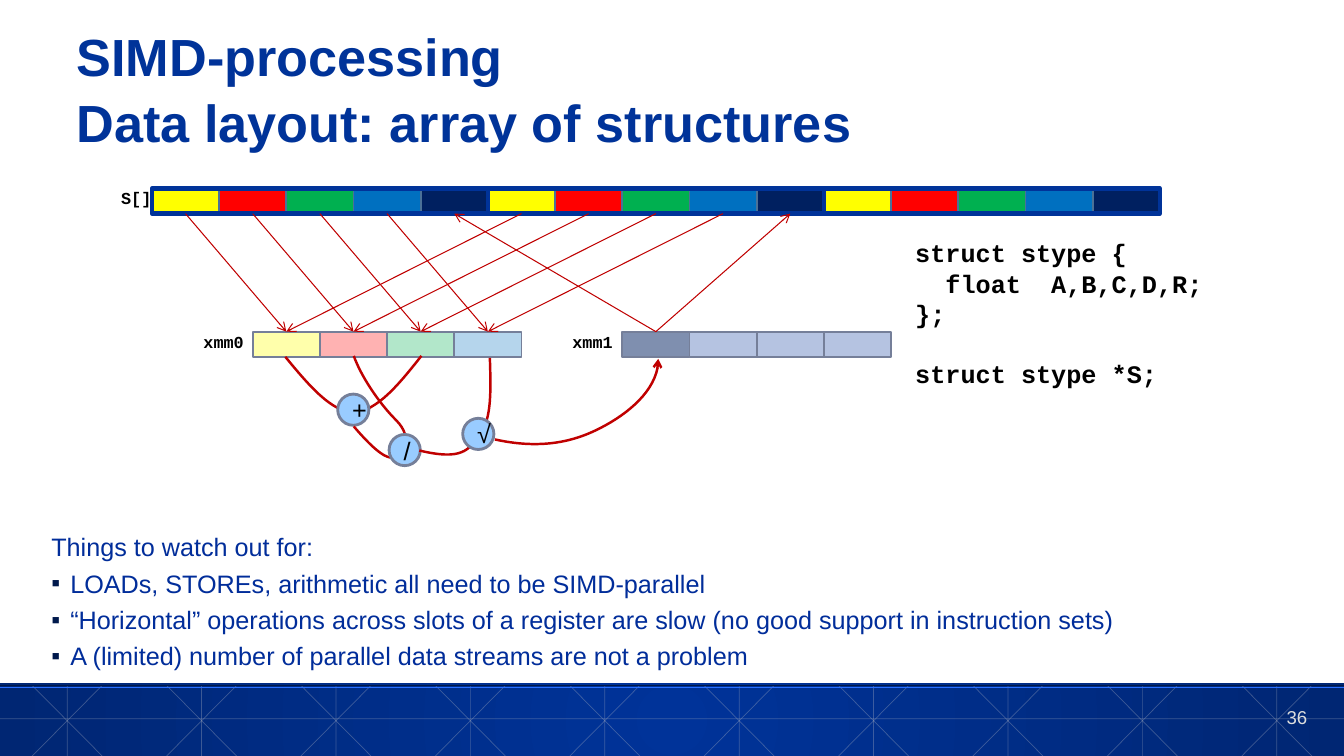
from lxml.etree import SubElement
from pptx import Presentation
from pptx.dml.color import RGBColor
from pptx.enum.shapes import MSO_CONNECTOR, MSO_SHAPE
from pptx.enum.text import MSO_ANCHOR, MSO_AUTO_SIZE, PP_ALIGN
from pptx.oxml.ns import qn
from pptx.util import Pt

COLORS = {
    "navy": "003399", "deep": "002673", "rule": "00194C", "bright": "2970FF",
    "grid": "ACB2C2", "number": "DDDEDD", "body": "012D9A", "black": "000000",
    "yellow": "FFFF00", "red": "FF0000", "green": "00B050", "blue": "0070C0",
    "dark": "002060", "cell_line": "4B7197", "register_line": "757F99",
    "flow": "C00000", "operator": "99CCFF",
}
RGB = {name: RGBColor.from_string(value) for name, value in COLORS.items()}
CELL_W, CELL_H = 48, 18
ARRAY_X, ARRAY_Y, REGISTER_Y = 108.5, 134.6, 236.9


def write(tf, text, size=18, color="black", font="Arial", bold=False,
          align=PP_ALIGN.LEFT, before=0, spacing=None):
    for i, line in enumerate(text.split("\n")):
        p = tf.paragraphs[0] if i == 0 else tf.add_paragraph()
        p.text = line
        p.alignment = align
        p.space_before = Pt(before if i else 0)
        if spacing:
            p.line_spacing = spacing
        for r in p.runs:
            r.font.size, r.font.name, r.font.bold = Pt(size), font, bold
            r.font.color.rgb = RGB[color]


def outline(s, color, width, arrow=False):
    """Set the line of a shape or connector and switch its shadow off."""
    s.line.color.rgb = RGB[color]
    s.line.width = Pt(width)
    if arrow:
        SubElement(s.line._ln, qn("a:tailEnd"), type="arrow")
    SubElement(s._element.spPr, qn("a:effectLst"))


prs = Presentation()
prs.slide_width, prs.slide_height = Pt(960), Pt(540)
slide = prs.slides.add_slide(prs.slide_layouts[1])
shapes = slide.shapes

# Footer band
band = shapes.add_shape(MSO_SHAPE.RECTANGLE, 0, Pt(488.2), Pt(960), Pt(51.8))
band.line.fill.background()
band.shadow.inherit = False
band.fill.gradient()
for stop, color, position in zip(band.fill.gradient_stops, ("navy", "deep"), (0, 1)):
    stop.color.rgb = RGB[color]
    stop.position = position
grad = band._element.spPr.find(qn("a:gradFill"))
grad.remove(grad.find(qn("a:lin")))
radial = SubElement(grad, qn("a:path"), path="circle")
SubElement(radial, qn("a:fillToRect"), l="50000", t="50000", r="50000", b="50000")

grid = [(0, 513.4, 960, 513.4)]
for x in range(48, 960, 96):
    grid += [(x + top, 489.6, x - top, 540) for top in (0, -25, 25)]
for x1, y1, x2, y2 in grid:
    s = shapes.add_connector(MSO_CONNECTOR.STRAIGHT, Pt(x1), Pt(y1), Pt(x2), Pt(y2))
    outline(s, "grid", 0.5)
    SubElement(s.line._ln.find(".//" + qn("a:srgbClr")), qn("a:alpha"), val="35000")
for y, color, width in ((489.6, "rule", 1.25), (491, "bright", 1)):
    s = shapes.add_connector(MSO_CONNECTOR.STRAIGHT, 0, Pt(y), Pt(960), Pt(y))
    outline(s, color, width)

# Title and list
title = shapes.title
title.left, title.top, title.width, title.height = Pt(54.7), Pt(15.1), Pt(850.3), Pt(94.3)
tf = title.text_frame
tf.margin_left = tf.margin_right = tf.margin_top = tf.margin_bottom = 0
tf.vertical_anchor = MSO_ANCHOR.MIDDLE
tf.auto_size = MSO_AUTO_SIZE.NONE
write(tf, "SIMD-processing\vData layout: array of structures", size=37.3,
      color="navy", bold=True, spacing=1.05)

body = slide.placeholders[1]
body.left, body.top, body.width, body.height = Pt(29.5), Pt(373.7), Pt(782.6), Pt(107.3)
tf = body.text_frame
tf.margin_top = Pt(6)
tf.auto_size = MSO_AUTO_SIZE.NONE
write(tf, "Things to watch out for:\n"
      "LOADs, STOREs, arithmetic all need to be SIMD-parallel\n"
      "“Horizontal” operations across slots of a register are slow "
      "(no good support in instruction sets)\n"
      "A (limited) number of parallel data streams are not a problem",
      color="body", before=4.4)
for i, p in enumerate(tf.paragraphs):
    pPr = p._p.get_or_add_pPr()
    indent = Pt(13.5) if i else 0
    pPr.set("marL", str(indent))
    pPr.set("indent", str(-indent))
    if i:
        SubElement(SubElement(pPr, qn("a:buClr")), qn("a:srgbClr"), val=COLORS["rule"])
        SubElement(pPr, qn("a:buFont"), typeface="Arial")
        SubElement(pPr, qn("a:buChar"), char="▪")
    else:
        SubElement(pPr, qn("a:buNone"))

# Rows of cells: x, y, line colour, (fill, opacity in percent) of each cell
struct = ("yellow", "red", "green", "blue", "dark")
rows = {
    "S": (ARRAY_X, ARRAY_Y, "cell_line", [(c, 100) for c in struct * 3]),
    "xmm0": (ARRAY_X + 1.5 * CELL_W, REGISTER_Y, "register_line",
             [("yellow", 33), ("red", 30), ("green", 30), ("blue", 29)]),
    "xmm1": (ARRAY_X + 7 * CELL_W, REGISTER_Y, "register_line",
             [("dark", 50)] + [("navy", 29)] * 3),
}
cells = {}
for name, (x, y, line, fills) in rows.items():
    for i, (color, opacity) in enumerate(fills):
        s = shapes.add_shape(MSO_SHAPE.RECTANGLE, Pt(x + i * CELL_W), Pt(y),
                             Pt(CELL_W), Pt(CELL_H))
        s.fill.solid()
        s.fill.fore_color.rgb = RGB[color]
        if opacity < 100:
            SubElement(s._element.spPr.find(".//" + qn("a:srgbClr")), qn("a:alpha"),
                       val=str(opacity * 1000))
        outline(s, line, 1.25)
        cells[name, i] = s

struct_w = len(struct) * CELL_W
for i in range(3):
    s = shapes.add_shape(MSO_SHAPE.RECTANGLE, Pt(ARRAY_X + i * struct_w), Pt(ARRAY_Y),
                         Pt(struct_w), Pt(CELL_H))
    s.fill.background()
    outline(s, "navy", 3)

# Loads into xmm0 and stores from xmm1
moves = [(("S", first + i), 2, ("xmm0", i), 0) for first in (0, 5) for i in range(4)]
moves += [(("xmm1", 0), 0, ("S", i), 2) for i in (4, 9)]
for source, source_side, target, target_side in moves:
    s = shapes.add_connector(MSO_CONNECTOR.STRAIGHT, 0, 0, 0, 0)
    s.begin_connect(cells[source], source_side)
    s.end_connect(cells[target], target_side)
    outline(s, "flow", 0.75, arrow=True)

# Data flow: Bézier points of each curve, then the operator drawn over it
flows = [
    ([(353.5, 313.9), (382.9, 320.4), (406, 316.8), (425.5, 307.4),
      (445, 298.1), (470.9, 278.6), (470.2, 256.3)], None),
    ([(203.8, 254.9), (220.3, 275), (236.9, 294.5), (252.7, 294.5),
      (269.3, 293.8), (285.1, 274.3), (301, 254.2)], ("+", 241.2, 281.5)),
    ([(252.7, 304.6), (269.3, 324), (276.5, 327.6), (281.5, 326.9),
      (286.6, 326.2), (296.6, 313.9), (283, 300.2),
      (270.7, 288), (257.8, 268.6), (252.7, 254.2)], ("/", 277.9, 310.3)),
    ([(299.5, 321.8), (329.8, 329), (334.8, 321.8), (342.7, 310.3),
      (351.4, 299.5), (350.6, 277.9), (349.9, 255.6)], ("√", 330.5, 298.8)),
]
for points, operator in flows:
    start, *rest = [(Pt(x), Pt(y)) for x, y in points]
    builder = shapes.build_freeform(*start)
    builder.add_line_segments(rest, close=False)
    s = builder.convert_to_shape()
    s.fill.background()
    outline(s, "flow", 1.75, arrow=operator is None)
    segments = list(s._element.iter(qn("a:lnTo")))
    for i in range(0, len(segments), 3):
        curve = SubElement(segments[i].getparent(), qn("a:cubicBezTo"))
        for segment in segments[i:i + 3]:
            curve.append(segment[0])
            segment.getparent().remove(segment)
    if operator:
        symbol, x, y = operator
        s = shapes.add_shape(MSO_SHAPE.OVAL, Pt(x), Pt(y), Pt(22.3), Pt(22.3))
        s.fill.solid()
        s.fill.fore_color.rgb = RGB["operator"]
        outline(s, "register_line", 2)
        write(s.text_frame, symbol, align=PP_ALIGN.CENTER)

# Labels, code and slide number
code = {"font": "Courier New", "bold": True}
label = {**code, "size": 12, "align": PP_ALIGN.RIGHT}
for text, x, y, w, h, style in (
        ("S[]", 67.2, 130.3, 48, 21.6, label),
        ("xmm0", 133.2, 233.3, 48, 21.6, label),
        ("xmm1", 396.7, 233.3, 48, 21.6, label),
        ("struct stype {\n  float  A,B,C,D,R;\n};", 646.6, 166.3, 240, 72,
         {**code, "spacing": Pt(21.6)}),
        ("struct stype *S;", 646.6, 252.7, 240, 28.8, {**code, "spacing": Pt(21.6)})):
    tf = shapes.add_textbox(Pt(x), Pt(y), Pt(w), Pt(h)).text_frame
    tf.word_wrap = True
    write(tf, text, **style)

tf = shapes.add_textbox(Pt(907.2), Pt(504.7), Pt(26.6), Pt(15.8)).text_frame
tf.margin_left = tf.margin_right = tf.margin_top = tf.margin_bottom = 0
tf.word_wrap = True
tf.vertical_anchor = MSO_ANCHOR.BOTTOM
write(tf, "36", size=13.3, color="number", align=PP_ALIGN.RIGHT)

prs.save("out.pptx")
